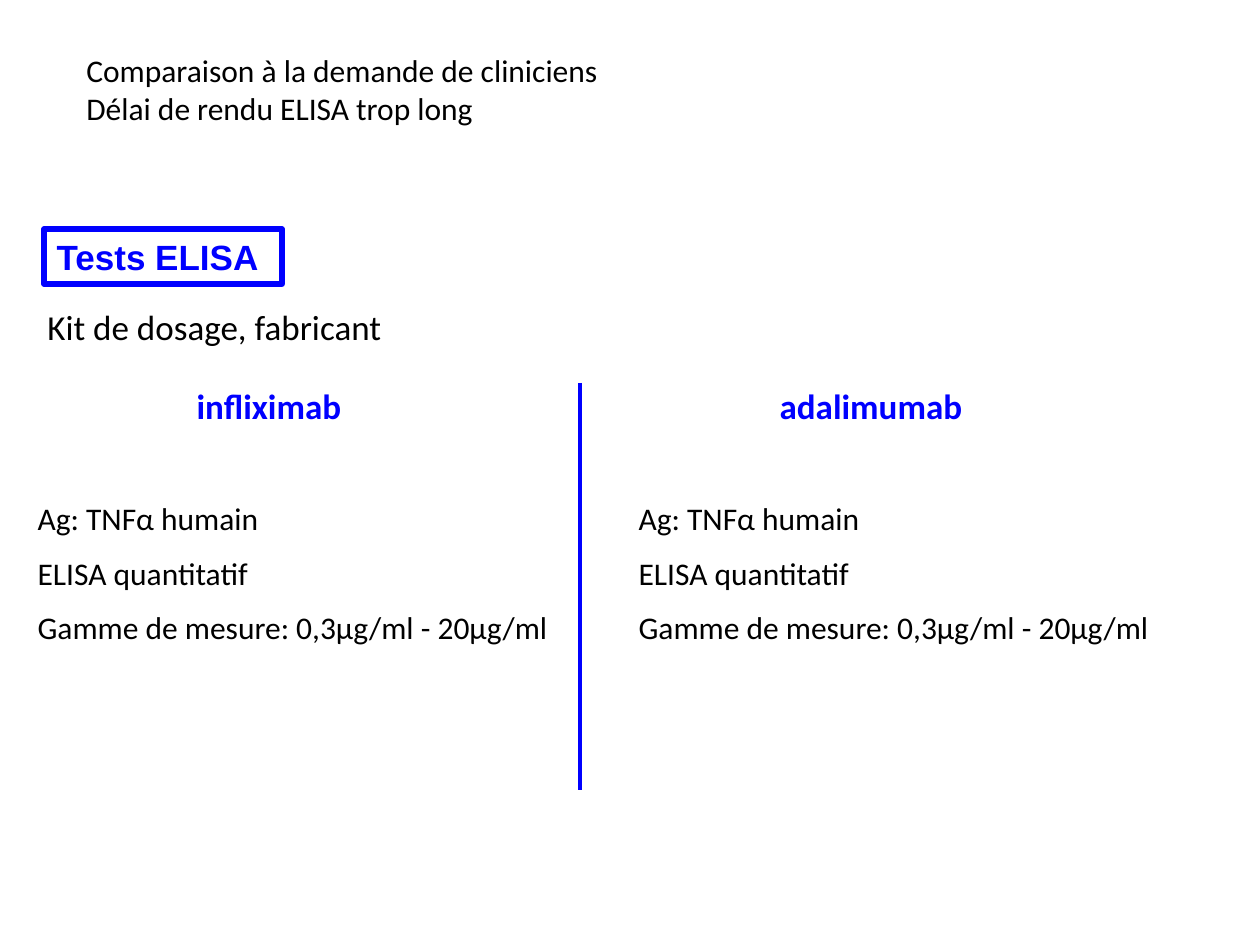
from pptx import Presentation
from pptx import util as u
from pptx.dml.color import RGBColor
from pptx.enum import shapes, text
from pptx.oxml.ns import qn
from lxml import etree

PX = 914400 / 126
BLUE = RGBColor(0x00, 0x00, 0xFF)
BLACK = RGBColor(0x00, 0x00, 0x00)
HEADING = {"size": u.Pt(20), "bold": True, "name": "Calibri"}
BODY = {"size": u.Pt(18), "bold": False, "name": "Calibri"}


def px(*lengths):
    return [u.Emu(round(length * PX)) for length in lengths]


def write(shape, box, lines, font, colour, gap=0, wrap=False):
    """Place a shape and fill it with plain left-aligned paragraphs, gap in points."""
    shape.left, shape.top, shape.width, shape.height = px(*box)
    frame = shape.text_frame
    frame.text = "\n".join(lines)
    frame.word_wrap = wrap
    frame.auto_size = text.MSO_AUTO_SIZE.NONE
    frame.vertical_anchor = text.MSO_ANCHOR.TOP
    for index, paragraph in enumerate(frame.paragraphs):
        paragraph.alignment = text.PP_ALIGN.LEFT
        paragraph.space_before = u.Pt(gap if index else 0)
        properties = paragraph._p.get_or_add_pPr()
        properties.set("marL", "0")
        properties.set("indent", "0")
        etree.SubElement(properties, qn("a:buNone"))
        for name, value in font.items():
            setattr(paragraph.runs[0].font, name, value)
        paragraph.runs[0].font.color.rgb = colour


presentation = Presentation()
presentation.slide_width, presentation.slide_height = u.Inches(10), u.Inches(7.5)
comparison_layout = presentation.slide_layouts[4]
slide = presentation.slides.add_slide(comparison_layout)
title, left_heading, left_list, right_heading, right_list = slide.placeholders

write(title, (44, 229, 238, 55), ["Tests ELISA"], HEADING | {"name": "Arial"}, BLUE, wrap=True)
title.line.color.rgb = BLUE
title.line.width = u.Pt(3)

divider = slide.shapes.add_connector(
    shapes.MSO_CONNECTOR.STRAIGHT, *px(580, 383, 580, 790))
divider.line.color.rgb = BLUE
divider.line.width = u.Pt(2.25)
etree.SubElement(divider._element.spPr, qn("a:effectLst"))

notes = [
    ((74, 45, 543, 89),
     ["Comparaison à la demande de cliniciens", "Délai de rendu ELISA trop long"], BODY),
    ((35, 299, 339, 55), ["Kit de dosage, fabricant"], BODY | {"size": u.Pt(20)}),
]
for box, lines, font in notes:
    write(slide.shapes.add_textbox(*px(*box)), box, lines, font, BLACK)

assay = ["Ag: TNFα humain", "ELISA quantitatif", "Gamme de mesure: 0,3µg/ml - 20µg/ml"]
columns = [
    (left_heading, "infliximab", 184, 171, left_list, 25),
    (right_heading, "adalimumab", 767, 209, right_list, 626),
]
for heading, drug, heading_left, heading_width, assay_list, list_left in columns:
    write(heading, (heading_left, 378, heading_width, 55), [drug], HEADING, BLUE)
    write(assay_list, (list_left, 493, 549, 161), assay, BODY, BLACK, gap=9.5)

presentation.save("out.pptx")
